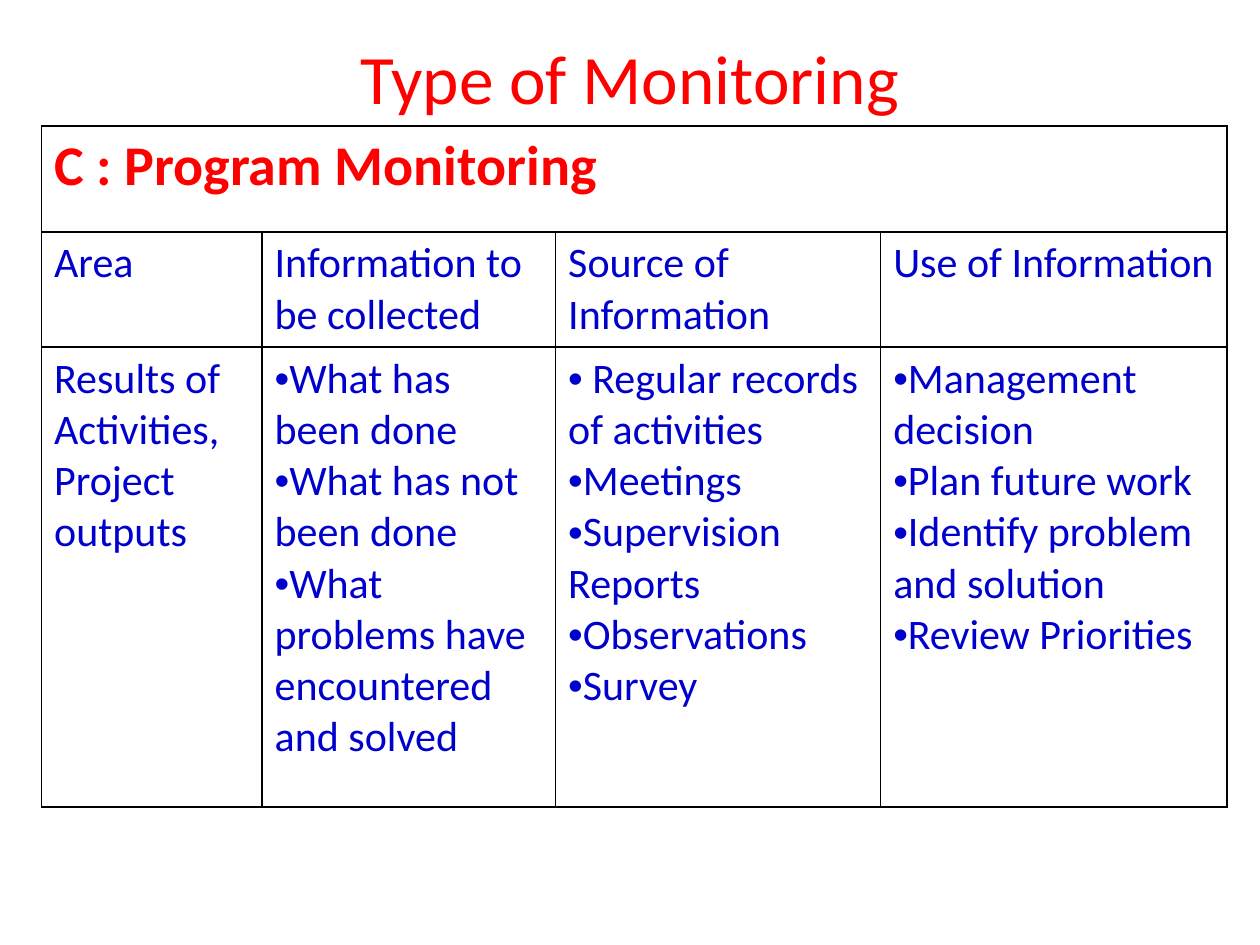
from lxml import etree
from pptx import Presentation
from pptx.dml.color import RGBColor
from pptx.enum.text import MSO_ANCHOR, PP_ALIGN
from pptx.oxml.ns import qn
from pptx.util import Inches, Pt

RED = RGBColor(0xFF, 0x00, 0x00)
BLUE = RGBColor(0x00, 0x00, 0xCC)
BLACK = RGBColor(0x00, 0x00, 0x00)
WHITE = RGBColor(0xFF, 0xFF, 0xFF)
CENTER = PP_ALIGN.CENTER
MIDDLE = MSO_ANCHOR.MIDDLE
FONT = "Calibri"
DOT = "•"

COLS = [1.75, 2.33, 2.58, 2.75]
ROWS = [0.84, 0.91, 3.65]
HEAD = "C : Program Monitoring"
LABELS = ["Area", "Information to be collected",
          "Source of Information", "Use of Information"]
# A leading dot marks a bulleted paragraph
ITEMS = [
    ["Results of Activities, Project outputs"],
    ["•What has been done", "•What has not been done",
     "•What problems have encountered and solved"],
    ["• Regular records of activities", "•Meetings",
     "•Supervision Reports", "•Observations", "•Survey"],
    ["•Management decision", "•Plan future work", "•Identify problem",
     "and solution", "•Review Priorities"],
]


class Deck:
    def __init__(self):
        self.prs = Presentation()
        self.prs.slide_width = Inches(10)
        self.prs.slide_height = Inches(7.5)
        self.slide = self.prs.slides.add_slide(self.prs.slide_layouts[5])

    def run(self, para, text, size, color, bold=False):
        run = para.add_run()
        run.text = text
        font = run.font
        font.name, font.size, font.bold = FONT, Pt(size), bold
        font.color.rgb = color

    def title(self, text, left, top, width, height):
        shape = self.slide.shapes.title
        shape.left, shape.top = Inches(left), Inches(top)
        shape.width, shape.height = Inches(width), Inches(height)
        frame = shape.text_frame
        frame.vertical_anchor = MIDDLE
        para = frame.paragraphs[0]
        para.alignment = CENTER
        self.run(para, text, 39.6, RED)

    def table(self, left, top, cols, rows):
        frame = self.slide.shapes.add_table(
            len(rows), len(cols), Inches(left), Inches(top),
            Inches(sum(cols)), Inches(sum(rows)))
        table = frame.table
        table.first_row = table.horz_banding = False
        for col, width in zip(table.columns, cols):
            col.width = Inches(width)
        for row, height in zip(table.rows, rows):
            row.height = Inches(height)
            for cell in row.cells:
                cell.fill.solid()
                cell.fill.fore_color.rgb = WHITE
                self.border(cell)
        return table

    def border(self, cell):
        props = cell._tc.get_or_add_tcPr()
        for spot, side in enumerate("LRTB"):
            line = etree.Element(qn(f"a:ln{side}"), w=str(Pt(1)))
            fill = etree.SubElement(line, qn("a:solidFill"))
            etree.SubElement(fill, qn("a:srgbClr"), val=str(BLACK))
            props.insert(spot, line)

    def bullet(self, para):
        props = para._p.get_or_add_pPr()
        etree.SubElement(props, qn("a:buFont"), typeface="Arial")
        etree.SubElement(props, qn("a:buChar"), char=DOT)

    def cell(self, cell, lines, size=24, color=BLUE, bold=False):
        frame = cell.text_frame
        for num, line in enumerate(lines):
            para = frame.add_paragraph() if num else frame.paragraphs[0]
            if line.startswith(DOT):
                self.bullet(para)
            self.run(para, line.removeprefix(DOT), size, color, bold)


def main():
    deck = Deck()
    deck.title("Type of Monitoring", 0.5, 0.3, 9, 0.62)

    # Heading row across all columns
    table = deck.table(0.33, 1, COLS, ROWS)
    table.cell(0, 0).merge(table.cell(0, len(COLS) - 1))
    deck.cell(table.cell(0, 0), [HEAD], 32, RED, True)

    # Column labels and their contents
    for col, (label, lines) in enumerate(zip(LABELS, ITEMS)):
        deck.cell(table.cell(1, col), [label])
        deck.cell(table.cell(2, col), lines)

    deck.prs.save("out.pptx")


if __name__ == "__main__":
    main()
